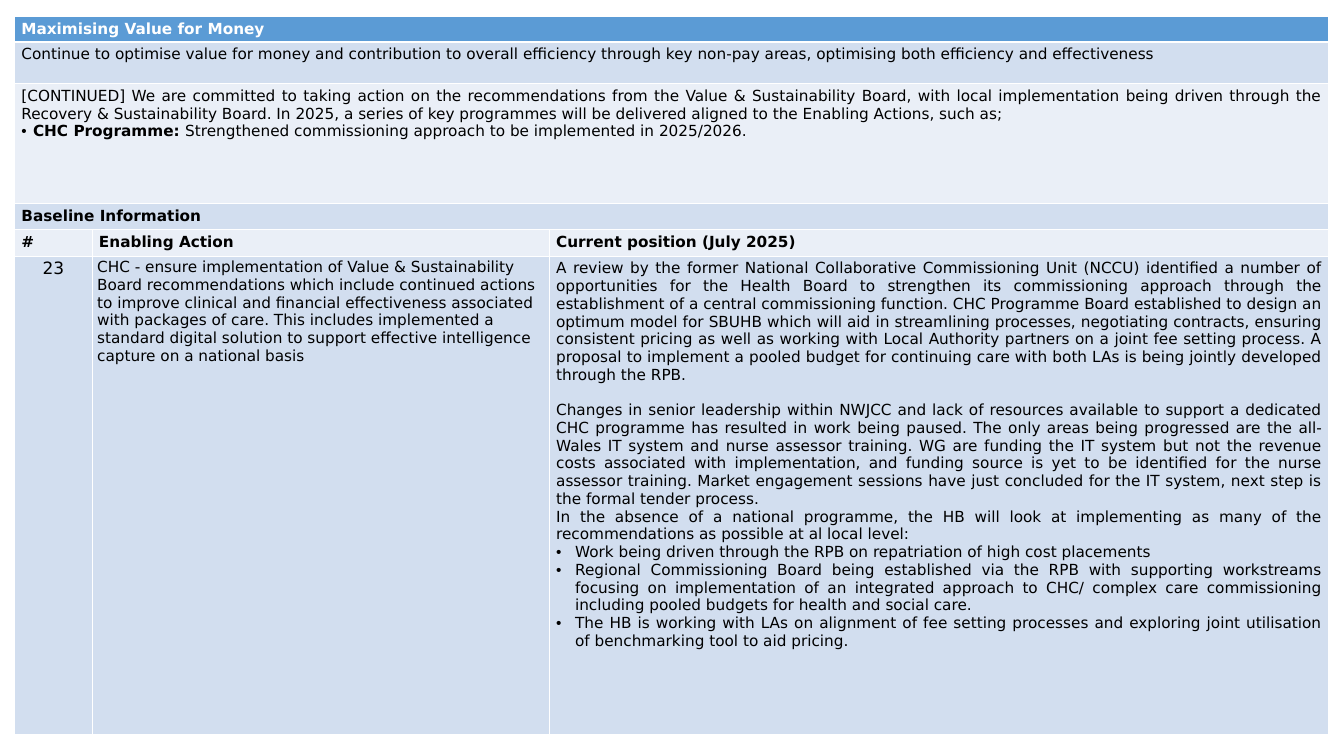
from lxml import etree
from pptx import Presentation
from pptx.dml.color import RGBColor
from pptx.enum import text as t
from pptx.oxml import ns
from pptx.util import Inches, Pt

HUES = {"head": "5B9BD5", "band": "D2DEEF", "pale": "EAEFF7",
        "white": "FFFFFF", "black": "000000"}
LEFT, JUST, MID = t.PP_ALIGN.LEFT, t.PP_ALIGN.JUSTIFY, t.PP_ALIGN.CENTER


def write(cell, runs, size=18, hue="black", bold=False, align=LEFT, dent=0, gap=0):
    frame = cell.text_frame
    para = frame.add_paragraph() if frame.text else frame.paragraphs[0]
    para.alignment = align
    para.space_before = Pt(gap)
    if isinstance(runs, str):
        runs = [(runs, bold)]
    for words, heavy in runs:
        run = para.add_run()
        run.text = words
        run.font.name = "DejaVu Sans"
        run.font.size = Pt(size)
        run.font.bold = heavy
        run.font.color.rgb = RGBColor.from_string(HUES[hue])
    if dent:
        props = para._p.get_or_add_pPr()
        props.set("marL", str(Inches(dent)))
        props.set("indent", str(-Inches(dent)))
        etree.SubElement(props, ns.qn("a:buFont")).set("typeface", "Arial")
        etree.SubElement(props, ns.qn("a:buChar")).set("char", "•")


def edge(cell, side, width):
    line = etree.SubElement(cell._tc.get_or_add_tcPr(), ns.qn(f"a:ln{side}"))
    line.set("w", str(Pt(width)))
    fill = etree.SubElement(line, ns.qn("a:solidFill"))
    etree.SubElement(fill, ns.qn("a:srgbClr")).set("val", HUES["white"])


deck = Presentation()
deck.slide_width, deck.slide_height = Inches(21.99), Inches(12.37)
slide = deck.slides.add_slide(deck.slide_layouts[6])

cols = [1.27, 7.48, 12.75]
rows = [0.42, 0.68, 1.96, 0.42, 0.44, 7.83]
fills = ["head", "band", "pale", "band", "pale", "band"]
grid = slide.shapes.add_table(len(rows), len(cols), Inches(0.24), Inches(0.27),
                              Inches(sum(cols)), Inches(sum(rows))).table
grid.first_row = grid.horz_banding = False
for col, width in zip(grid.columns, cols):
    col.width = Inches(width)
for row, height in zip(grid.rows, rows):
    row.height = Inches(height)

for r, fill in enumerate(fills):
    for c in range(len(cols)):
        cell = grid.cell(r, c)
        tight = r == 5 and c < 2
        cell.margin_left = cell.margin_right = Inches(0.08 if tight else 0.11)
        cell.margin_top = cell.margin_bottom = Inches(0.04 if tight else 0.06)
        if r in (0, 3, 4):
            cell.vertical_anchor = t.MSO_ANCHOR.MIDDLE
        for side in "LRTB":
            edge(cell, side, 3 if r == 0 and side == "B" else 1)
        cell.fill.solid()
        cell.fill.fore_color.rgb = RGBColor.from_string(HUES[fill])
for r in range(4):
    grid.cell(r, 0).merge(grid.cell(r, 2))

write(grid.cell(0, 0), "Maximising Value for Money", hue="white", bold=True)
write(grid.cell(1, 0), "Continue to optimise value for money and contribution to overall efficiency through key non-pay areas, optimising both efficiency and effectiveness")

aim = grid.cell(2, 0)
write(aim, "[CONTINUED] We are committed to taking action on the recommendations from the Value & Sustainability Board, with local implementation being driven through the Recovery & Sustainability Board. In 2025, a series of key programmes will be delivered aligned to the Enabling Actions, such as;", align=JUST)
write(aim, [("CHC Programme: ", True), ("Strengthened commissioning approach to be implemented in 2025/2026.", False)], dent=0.19)

write(grid.cell(3, 0), "Baseline Information", bold=True, align=JUST)
for c, label in enumerate(["#", "Enabling Action", "Current position (July 2025)"]):
    write(grid.cell(4, c), label, bold=True, align=JUST)

write(grid.cell(5, 0), "23", size=20, align=MID)
write(grid.cell(5, 1), "CHC - ensure implementation of Value & Sustainability Board recommendations which include continued actions to improve clinical and financial effectiveness associated with packages of care. This includes implemented a standard digital solution to support effective intelligence capture on a national basis")

status = grid.cell(5, 2)
for words, gap in [
    ("A review by the former National Collaborative Commissioning Unit (NCCU) identified a number of opportunities for the Health Board to strengthen its commissioning approach through the establishment of a central commissioning function. CHC Programme Board established to design an optimum model for SBUHB which will aid in streamlining processes, negotiating contracts, ensuring consistent pricing as well as working with Local Authority partners on a joint fee setting process. A proposal to implement a pooled budget for continuing care with both LAs is being jointly developed through the RPB.", 0),
    ("Changes in senior leadership within NWJCC and lack of resources available to support a dedicated CHC programme has resulted in work being paused. The only areas being progressed are the all-Wales IT system and nurse assessor training. WG are funding the IT system but not the revenue costs associated with implementation, and funding source is yet to be identified for the nurse assessor training. Market engagement sessions have just concluded for the IT system, next step is the formal tender process.", 21),
    ("In the absence of a national programme, the HB will look at implementing as many of the recommendations as possible at al local level:", 0),
]:
    write(status, words, align=JUST, gap=gap)
for words in [
    "Work being driven through the RPB on repatriation of high cost placements",
    "Regional Commissioning Board being established via the RPB with supporting workstreams focusing on implementation of an integrated approach to CHC/ complex care commissioning including pooled budgets for health and social care.",
    "The HB is working with LAs on alignment of fee setting processes and exploring joint utilisation of benchmarking tool to aid pricing.",
]:
    write(status, words, align=JUST, dent=0.31)

deck.save("out.pptx")
